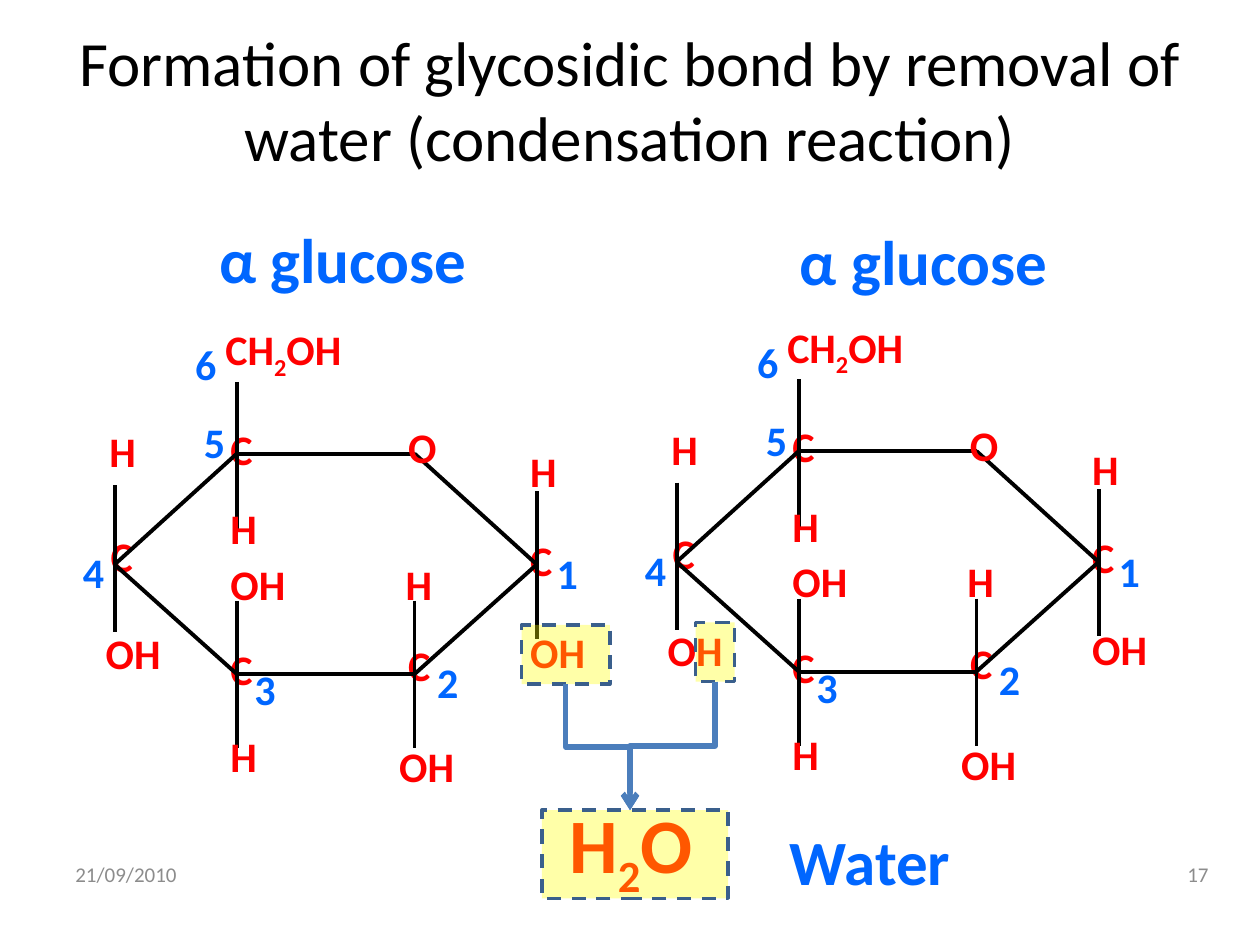
from lxml import etree
from pptx import Presentation
from pptx import util as u
from pptx.dml.color import RGBColor
from pptx.enum import dml, shapes, text
from pptx.oxml.ns import qn

FONT = "Calibri"
COLORS = {"black": "000000", "grey": "8C8C8C", "atom": "FF0000", "number": "0066FF",
          "glow": "FFFF00", "border": "3A5F8C", "arrow": "4B7EBC"}

TITLE = "Formation of glycosidic bond by removal of water (condensation reaction)"
FOOTERS = [
    ("21/09/2010", (0.5, 6.74, 2.33, 0.4), text.PP_ALIGN.LEFT),
    ("17", (9.14, 6.74, 0.55, 0.4), text.PP_ALIGN.RIGHT),
]
LABELS = [
    ("α glucose", (1.64, 1.7, 2.19, 0.71)),
    ("α glucose", (6.25, 1.72, 2.19, 0.71)),
    ("Water", (6.17, 6.48, 1.88, 0.71)),
]

MOLECULE_OFFSETS = [(0, 0), (4.46, -0.02)]
ATOM_HEIGHT = 0.44
ATOM_WIDTHS = {"C": 0.45, "O": 0.3, "H": 0.52, "OH": 0.89, "CH2OH": 1.53}
NUMBER_WIDTH = 0.45
ATOMS = {
    "C": [(4.11, 4.19), (3.14, 5.03), (0.78, 4.16), (1.73, 3.31), (1.73, 5.06)],
    "CH2OH": [(1.69, 2.52)],
    "OH": [(0.74, 4.93), (3.07, 5.83), (4.11, 4.92), (1.73, 4.38)],
    "H": [(0.77, 3.33), (1.73, 3.94), (1.73, 5.75), (3.12, 4.38), (4.11, 3.49)],
    "O": [(3.14, 3.3)],
}
NUMBERS = [("1", 4.32, 4.3), ("2", 3.37, 5.16), ("3", 1.92, 5.22),
           ("4", 0.56, 4.29), ("5", 1.52, 3.26), ("6", 1.45, 2.64)]

RING = [(0.91, 4.48), (1.88, 3.6), (3.29, 3.6), (4.26, 4.48), (3.29, 5.35), (1.88, 5.35)]
SIDE_BOND_LENGTH = 1.17
SIDE_BONDS = [(1.88, 3.03), (0.91, 3.85), (1.88, 4.77), (3.29, 4.77), (4.26, 3.9)]

HYDROXYL = (4.14, 4.96, 0.7, 0.47)
HYDROGEN = (5.52, 4.94, 0.31, 0.47)
WATER = (4.3, 6.43, 1.48, 0.7)
WATER_TEXT = (4.42, 6.27, 1.36, 0.84)
ARROW_TIP = (5, 6.43)


def rgb(name):
    return RGBColor.from_string(COLORS[name])


def add_text(parent, words, frame, size, color, bold=True,
             align=text.PP_ALIGN.LEFT, anchor=text.MSO_ANCHOR.TOP, formula=False):
    box = parent.shapes.add_textbox(*map(u.Inches, frame))
    box.text_frame.word_wrap = True
    box.text_frame.vertical_anchor = anchor
    para = box.text_frame.paragraphs[0]
    para.alignment = align
    for part in words.replace("2", "|2|").split("|") if formula else [words]:
        span = para.add_run()
        span.text = part
        span.font.name = FONT
        span.font.size = u.Pt(size)
        span.font.bold = bold
        span.font.color.rgb = rgb(color)
        if formula and part == "2":
            span.font._element.set("baseline", "-25000")


def add_line(parent, kind, start, end, color, width):
    line = parent.shapes.add_connector(kind, *map(u.Inches, (*start, *end)))
    line.line.color.rgb = rgb(color)
    line.line.width = u.Pt(width)
    etree.SubElement(line._element.spPr, qn("a:effectLst"))
    return line


def add_molecule(page, dx, dy):
    group = page.shapes.add_group_shape()

    def shift(point):
        return point[0] + dx, point[1] + dy

    def label(words, point, width, color):
        add_text(group, words, (*shift(point), width, ATOM_HEIGHT), 24, color,
                 formula=color == "atom")

    for atom in ("C", "CH2OH"):
        for point in ATOMS[atom]:
            label(atom, point, ATOM_WIDTHS[atom], "atom")
    bonds = list(zip(RING, RING[1:] + RING[:1]))
    bonds += [((x, y), (x, y + SIDE_BOND_LENGTH)) for x, y in SIDE_BONDS]
    for start, end in bonds:
        add_line(group, shapes.MSO_CONNECTOR.STRAIGHT, shift(start), shift(end), "black", 2.25)
    for atom in ("OH", "H", "O"):
        for point in ATOMS[atom]:
            label(atom, point, ATOM_WIDTHS[atom], "atom")
    for number, x, y in NUMBERS:
        label(number, (x, y), NUMBER_WIDTH, "number")


def add_highlight(page, frame):
    box = page.shapes.add_shape(shapes.MSO_SHAPE.RECTANGLE, *map(u.Inches, frame))
    box.shadow.inherit = False
    box.fill.solid()
    box.fill.fore_color.rgb = rgb("glow")
    fill_color = box._element.spPr.find(qn("a:solidFill"))[0]
    etree.SubElement(fill_color, qn("a:alpha")).set("val", "34000")
    box.line.color.rgb = rgb("border")
    box.line.width = u.Pt(2)
    box.line.dash_style = dml.MSO_LINE.DASH


def add_elbow_arrow(page, source, tip):
    left, top, width, height = source
    start = (left + width / 2, top + height)
    run, drop = tip[0] - start[0], tip[1] - start[1]
    middle = (start[0] + run / 2, start[1] + drop / 2)
    arrow = add_line(page, shapes.MSO_CONNECTOR.ELBOW, start, tip, "arrow", 3)
    arrow.left, arrow.top = u.Inches(middle[0] - drop / 2), u.Inches(middle[1] - abs(run) / 2)
    arrow.width, arrow.height = u.Inches(drop), u.Inches(abs(run))
    turn = arrow._element.spPr.find(qn("a:xfrm"))
    turn.set("rot", str((270 if run > 0 else 90) * 60000))
    turn.set("flipH", "1" if run > 0 else "0")
    etree.SubElement(arrow.line._get_or_add_ln(), qn("a:tailEnd")).set("type", "arrow")


def main():
    deck = Presentation()
    deck.slide_width, deck.slide_height = u.Inches(10), u.Inches(7.5)
    page = deck.slides.add_slide(deck.slide_layouts[6])

    add_text(page, TITLE, (0.5, 0.16, 9, 1.25), 36, "black", bold=False,
             align=text.PP_ALIGN.CENTER, anchor=text.MSO_ANCHOR.MIDDLE)
    for words, frame, align in FOOTERS:
        add_text(page, words, frame, 12, "grey", bold=False,
                 align=align, anchor=text.MSO_ANCHOR.MIDDLE)
    for offset in MOLECULE_OFFSETS:
        add_molecule(page, *offset)
    for source in (HYDROXYL, HYDROGEN):
        add_highlight(page, source)
        add_elbow_arrow(page, source, ARROW_TIP)
    add_text(page, "H2O", WATER_TEXT, 44, "atom", formula=True)
    add_highlight(page, WATER)
    for words, frame in LABELS:
        add_text(page, words, frame, 36, "number")

    deck.save("out.pptx")


if __name__ == "__main__":
    main()
